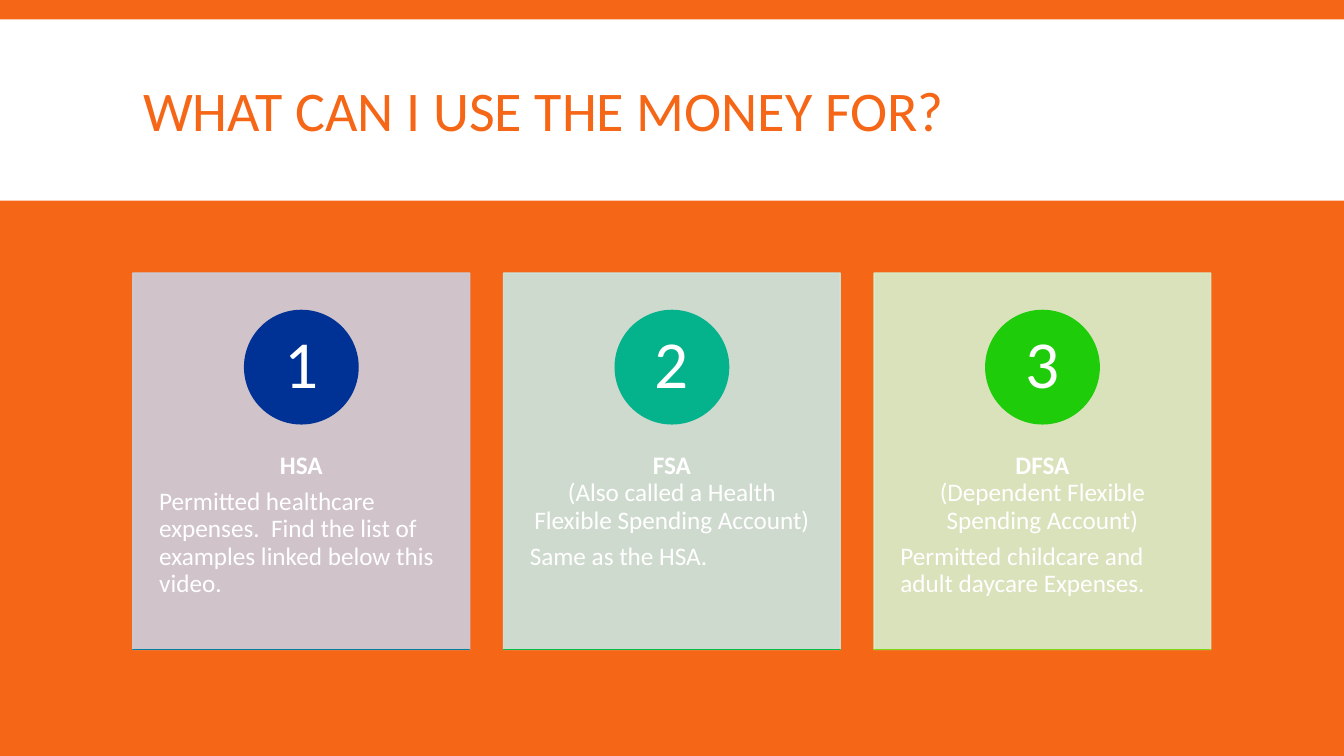
from lxml.etree import SubElement
from pptx import Presentation
from pptx.dml.color import RGBColor
from pptx.enum.shapes import MSO_SHAPE as Shape
from pptx.enum.text import MSO_ANCHOR as Anchor, PP_ALIGN as Align
from pptx.oxml.ns import qn
from pptx.util import Pt

FONT = "Calibri"
ORANGE = RGBColor(0xF5, 0x66, 0x17)
WHITE = RGBColor(0xFF, 0xFF, 0xFF)

CARD_LEFT, CARD_TOP = 95, 195
CARD_WIDTH, CARD_HEIGHT = 240.5, 269
CARD_PITCH = 264.7
CIRCLE_SIZE = 81

# Account, its long name, what it pays for, card, circle and baseline colours
ACCOUNTS = [
    ("HSA", "",
     "Permitted healthcare expenses.  Find the list of examples linked below this video.",
     RGBColor(0xCC, 0xCE, 0xDD), RGBColor(0x00, 0x32, 0x96), RGBColor(0x02, 0x80, 0xA4)),
    ("FSA", "(Also called a Health Flexible Spending Account)",
     "Same as the HSA.",
     RGBColor(0xCB, 0xE7, 0xE2), RGBColor(0x04, 0xB2, 0x8C), RGBColor(0x07, 0xBF, 0x45)),
    ("DFSA", "(Dependent Flexible Spending Account)",
     "Permitted childcare and adult daycare Expenses.",
     RGBColor(0xD7, 0xF0, 0xCD), RGBColor(0x1F, 0xCC, 0x0A), RGBColor(0x7D, 0xD8, 0x0E)),
]


def add_block(slide, kind, left, top, width, height, color, outlined=True):
    block = slide.shapes.add_shape(kind, Pt(left), Pt(top), Pt(width), Pt(height))
    block.shadow.inherit = False
    block.fill.solid()
    block.fill.fore_color.rgb = color
    if outlined:
        block.line.color.rgb = color
        block.line.width = Pt(1)
    else:
        block.line.fill.background()
    return block


def make_translucent(block, percent):
    for color in block.element.spPr.iter(qn("a:srgbClr")):
        SubElement(color, qn("a:alpha"), val=str(percent * 1000))


def set_insets(frame, side, end):
    frame.margin_left = frame.margin_right = Pt(side)
    frame.margin_top = frame.margin_bottom = Pt(end)


def style_paragraph(paragraph, size, color, align, spacing=0.9, after=0):
    paragraph.alignment = align
    paragraph.line_spacing = spacing
    paragraph.space_after = Pt(after)
    paragraph.font.name = FONT
    paragraph.font.size = Pt(size)
    paragraph.font.color.rgb = color


def add_header(slide):
    band = add_block(slide, Shape.RECTANGLE, 0, 13.8, 960, 129.6, WHITE, outlined=False)
    title = slide.shapes.title
    title.element.addprevious(band.element)
    title.left, title.top, title.width, title.height = Pt(95), Pt(22.5), Pt(770.5), Pt(119)
    title.text_frame.text = "WHAT CAN I USE THE MONEY FOR?"
    title.text_frame.vertical_anchor = Anchor.MIDDLE
    style_paragraph(title.text_frame.paragraphs[0], 40, ORANGE, Align.LEFT, spacing=0.85)


def add_description(slide, left, account, long_name, use):
    box = slide.shapes.add_textbox(Pt(left), Pt(297.5), Pt(CARD_WIDTH), Pt(161.5))
    frame = box.text_frame
    frame.word_wrap = True
    set_insets(frame, 18.75, 26)
    heading = frame.paragraphs[0]
    name = heading.add_run()
    name.text = account
    name.font.bold = True
    if long_name:
        heading.add_line_break()
        heading.add_run().text = long_name
    style_paragraph(heading, 18, WHITE, Align.CENTER, after=6.3)
    body = frame.add_paragraph()
    body.text = use
    style_paragraph(body, 18, WHITE, Align.LEFT, after=6.3)


def add_number(slide, left, number, color):
    circle = add_block(slide, Shape.OVAL, left + (CARD_WIDTH - CIRCLE_SIZE) / 2, 221.75,
                       CIRCLE_SIZE, CIRCLE_SIZE, color)
    frame = circle.text_frame
    frame.vertical_anchor = Anchor.MIDDLE
    set_insets(frame, 6.5, 1)
    frame.text = str(number)
    style_paragraph(frame.paragraphs[0], 48, WHITE, Align.CENTER)


def add_card(slide, number, account, long_name, use, card_color, circle_color, base_color):
    left = CARD_LEFT + (number - 1) * CARD_PITCH
    card = add_block(slide, Shape.RECTANGLE, left, CARD_TOP, CARD_WIDTH, CARD_HEIGHT, card_color)
    make_translucent(card, 90)
    add_description(slide, left, account, long_name, use)
    add_number(slide, left, number, circle_color)
    # Thin baseline under the card
    add_block(slide, Shape.RECTANGLE, left, CARD_TOP + CARD_HEIGHT, CARD_WIDTH, 0.01, base_color)


def main():
    deck = Presentation()
    deck.slide_width, deck.slide_height = Pt(960), Pt(540)
    slide = deck.slides.add_slide(deck.slide_layouts[5])
    slide.background.fill.solid()
    slide.background.fill.fore_color.rgb = ORANGE

    add_header(slide)
    for number, account in enumerate(ACCOUNTS, start=1):
        add_card(slide, number, *account)

    deck.save("out.pptx")


if __name__ == "__main__":
    main()
